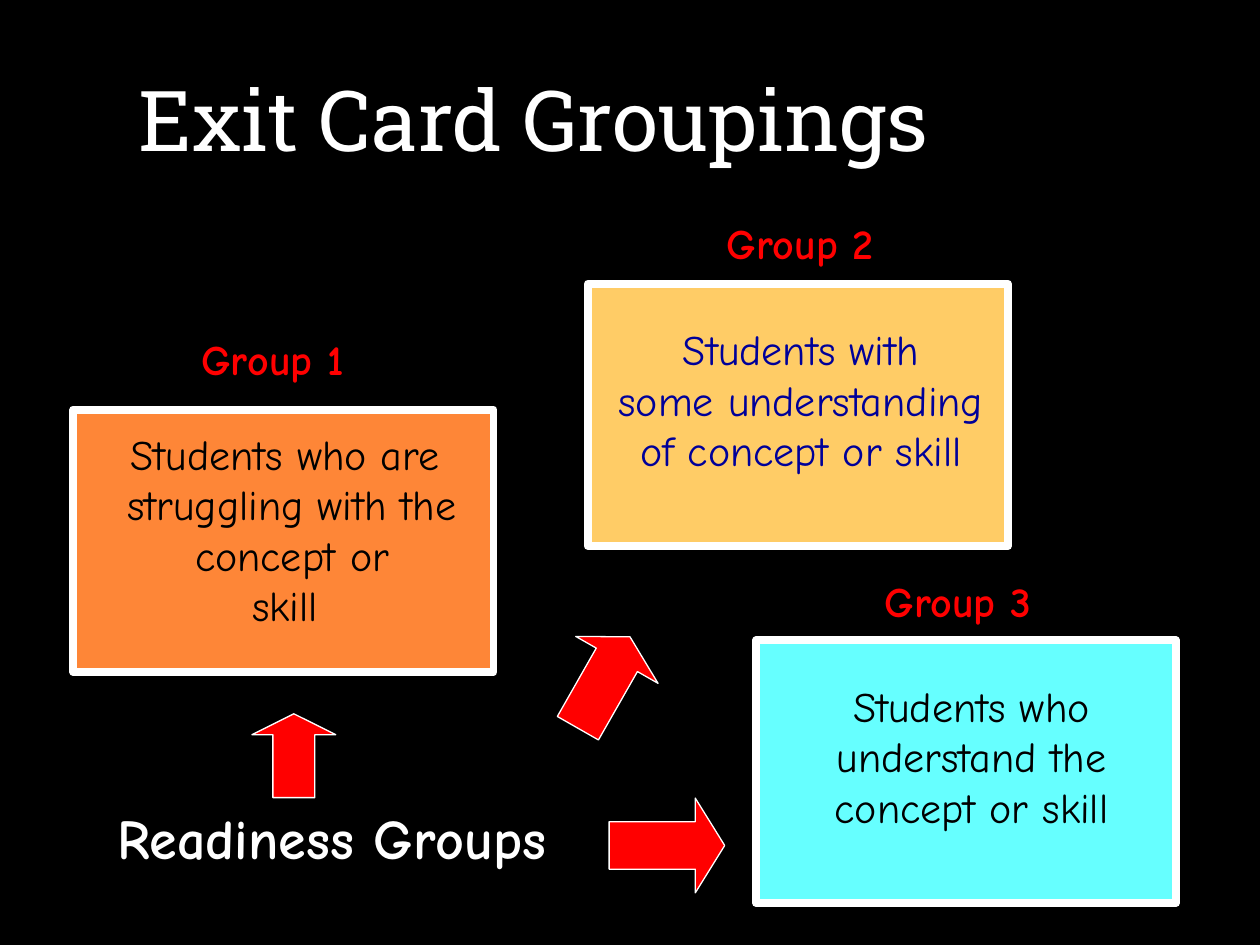
from pptx import Presentation
from pptx.dml.color import RGBColor
from pptx.enum.shapes import MSO_SHAPE
from pptx.enum.text import MSO_ANCHOR, MSO_AUTO_SIZE, PP_ALIGN
from pptx.util import Cm, Pt

BLACK = RGBColor(0x00, 0x00, 0x00)
WHITE = RGBColor(0xFF, 0xFF, 0xFF)
RED = RGBColor(0xFF, 0x00, 0x00)
NAVY = RGBColor(0x00, 0x00, 0x99)
ORANGE = RGBColor(0xFE, 0x86, 0x37)
YELLOW = RGBColor(0xFF, 0xCC, 0x66)
CYAN = RGBColor(0x66, 0xFF, 0xFF)


def write(box, place, lines, size, color, font="Comic Neue", bold=False, align=PP_ALIGN.LEFT):
    box.left, box.top, box.width, box.height = [Cm(length) for length in place]
    frame = box.text_frame
    frame.text = "\n".join(lines)
    frame.word_wrap = False
    frame.auto_size = MSO_AUTO_SIZE.SHAPE_TO_FIT_TEXT
    frame.vertical_anchor = MSO_ANCHOR.TOP
    for para in frame.paragraphs:
        para.alignment = align
        para.font.name = font
        para.font.size = Pt(size)
        para.font.bold = bold
        para.font.color.rgb = color


def draw(kind, place, fill, line_width):
    shape = page.shapes.add_shape(kind, *[Cm(length) for length in place])
    shape.shadow.inherit = False
    shape.fill.solid()
    shape.fill.fore_color.rgb = fill
    shape.line.color.rgb = WHITE
    shape.line.width = Pt(line_width)
    return shape


deck = Presentation()
deck.slide_width, deck.slide_height = Cm(25.4), Cm(19.05)
page = deck.slides.add_slide(deck.slide_layouts[5])
page.background.fill.solid()
page.background.fill.fore_color.rgb = BLACK

write(page.shapes.title, (2.54, 1.24, 18.19, 2.29), ["Exit Card Groupings"], 48, WHITE, "Roboto Slab")

groups = [
    ("Group 1", (3.81, 6.6), (1.48, 8.26), ORANGE, (1.63, 8.51, 8.23, 4.32), BLACK,
     ["Students who are", " struggling with the", " concept or", "skill"]),
    ("Group 2", (14.4, 4.27), (11.85, 5.72), YELLOW, (11.99, 6.4, 8.31, 3.3), NAVY,
     ["Students with", "some understanding", "of concept or skill"]),
    ("Group 3", (17.58, 11.48), (15.24, 12.91), CYAN, (16.31, 13.59, 6.55, 3.3), BLACK,
     ["Students who", "understand the", "concept or skill"]),
]
for name, name_corner, card_corner, fill, text_place, text_color, lines in groups:
    draw(MSO_SHAPE.RECTANGLE, (*card_corner, 8.47, 5.29), fill, 4.5)
    box = page.shapes.add_textbox(0, 0, 0, 0)
    write(box, text_place, lines, 24, text_color, align=PP_ALIGN.CENTER)
    label = page.shapes.add_textbox(0, 0, 0, 0)
    write(label, (*name_corner, 3.71, 1.45), [name], 24, RED, bold=True)

readiness = page.shapes.add_textbox(0, 0, 0, 0)
write(readiness, (2.11, 16.08, 9.93, 1.6), ["Readiness Groups"], 32, WHITE, bold=True)

arrows = [
    (MSO_SHAPE.UP_ARROW, (5.08, 14.39, 1.69, 1.69), 0.25, 0),
    (MSO_SHAPE.RIGHT_ARROW, (12.28, 16.09, 2.33, 1.91), 0.31, 0),
    (MSO_SHAPE.UP_ARROW, (11.22, 12.7, 1.91, 2.12), 0.28, 29.7),
]
for kind, place, head, rotation in arrows:
    arrow = draw(kind, place, RED, 0.75)
    arrow.adjustments[0] = 0.5
    arrow.adjustments[1] = head
    arrow.rotation = rotation

deck.save("out.pptx")
